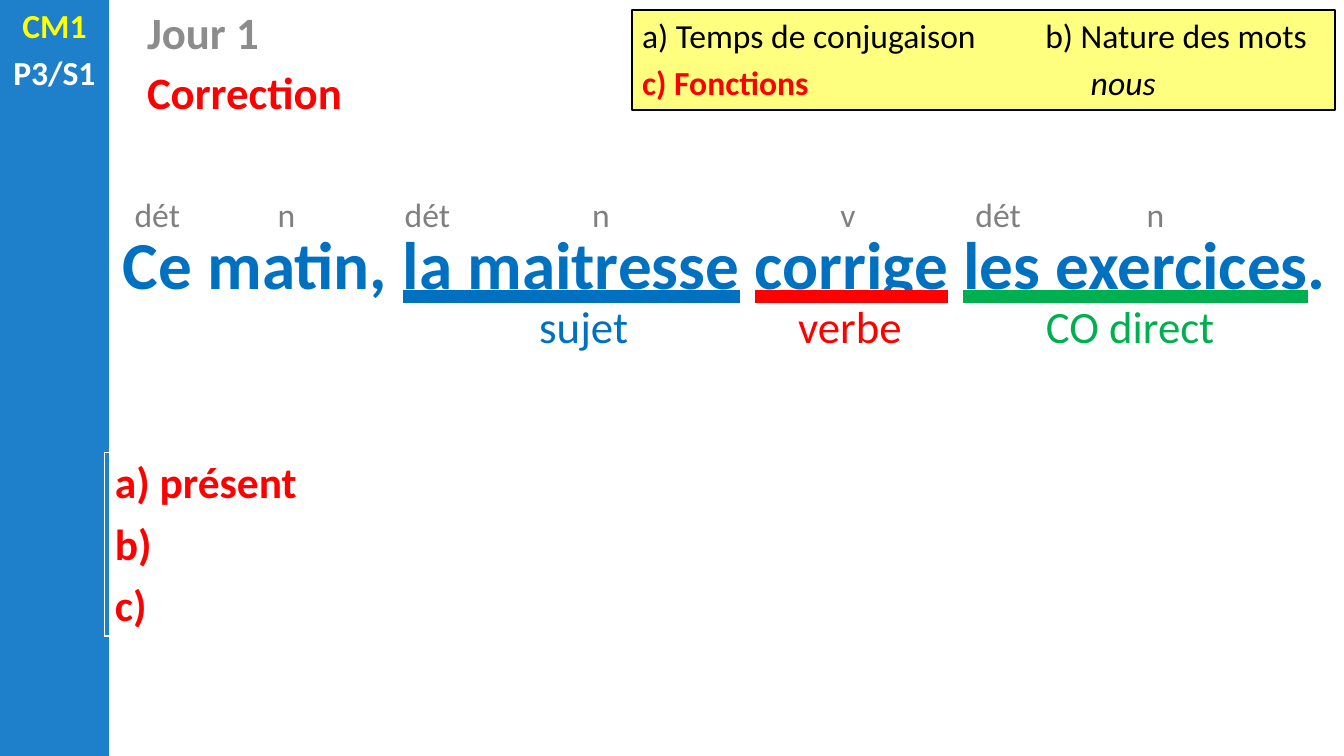
from lxml import etree
from pptx import Presentation
from pptx.dml.color import RGBColor
from pptx.enum.shapes import MSO_SHAPE
from pptx.enum.text import MSO_ANCHOR, MSO_UNDERLINE, PP_ALIGN
from pptx.oxml.ns import qn
from pptx.util import Inches, Pt

SLIDE_W, SLIDE_H = Inches(13.33), Inches(7.5)
FONT = "Calibri"
SIDEBAR = RGBColor(0x1E, 0x7F, 0xCB)
BLUE = RGBColor(0x00, 0x70, 0xC0)
RED = RGBColor(0xFF, 0x00, 0x00)
GREEN = RGBColor(0x00, 0xB0, 0x50)
YELLOW = RGBColor(0xFF, 0xFF, 0x00)
WHITE = RGBColor(0xFF, 0xFF, 0xFF)
BLACK = RGBColor(0x00, 0x00, 0x00)
DAY_GREY = RGBColor(0x8C, 0x8C, 0x8C)
TAG_GREY = RGBColor(0x80, 0x80, 0x80)

SIDEBAR_W = 8.1
BODY_X, BODY_W = 7.8, 92.2
TITLE_X, TITLE_H = 10.2, 8.53
TAG_Y, TAG_W, TAG_H = 24.93, 6.75, 6.67
TAGS = [("dét", 8.33), ("n", 17.93), ("dét", 28.43), ("n", 41.34),
        ("v", 59.71), ("dét", 70.89), ("n", 82.6)]
FUNCTION_Y = 38.8
FUNCTIONS = [("sujet", 38.78, 9.3, BLUE), ("verbe", 58.59, 9.3, RED),
             ("CO direct", 75.92, 16.35, GREEN)]
SENTENCE = [("Ce matin, ", None), ("la maitresse", BLUE), (" ", None),
            ("corrige", RED), (" ", None), ("les exercices", GREEN), (".", None)]


def across(share):
    return round(SLIDE_W * share / 100)


def down(share):
    return round(SLIDE_H * share / 100)


def area(x, y, w, h):
    return across(x), down(y), across(w), down(h)


def style(r, size, color, bold=False, italic=False):
    font = r.font
    font.size, font.bold, font.italic = Pt(size), bold, italic
    font.color.rgb = color
    font.name = FONT


def underline(r, color):
    r.font.underline = MSO_UNDERLINE.HEAVY_LINE
    u_fill = etree.Element(qn("a:uFill"))
    solid = etree.SubElement(u_fill, qn("a:solidFill"))
    etree.SubElement(solid, qn("a:srgbClr"), val=str(color))
    r.font.fill
    r._r.rPr.find(qn("a:solidFill")).addnext(u_fill)


def space_before(p):
    spacing = etree.SubElement(p._p.get_or_add_pPr(), qn("a:spcBef"))
    etree.SubElement(spacing, qn("a:spcPct"), val="20000")


def add_tab(p, share):
    tabs = etree.SubElement(p._p.get_or_add_pPr(), qn("a:tabLst"))
    etree.SubElement(tabs, qn("a:tab"), pos=str(across(share)), algn="l")


def add_text(s, box, text, size, colors, bold=False, align=PP_ALIGN.CENTER):
    tf = s.shapes.add_textbox(*area(*box)).text_frame
    tf.word_wrap = True
    tf.text = text
    for p, color in zip(tf.paragraphs, colors):
        p.alignment = align
        space_before(p)
        for r in p.runs:
            style(r, size, color, bold)
    return tf


def add_rect(s, box, color):
    sp = s.shapes.add_shape(MSO_SHAPE.RECTANGLE, *area(*box))
    sp.shadow.inherit = False
    sp.fill.solid()
    sp.fill.fore_color.rgb = color
    sp.line.fill.background()
    return sp


def add_sentence(s):
    tf = add_text(s, (BODY_X, 28.8, BODY_W, 12.13), "", 48, [BLUE])
    p = tf.paragraphs[0]
    for words, line_color in SENTENCE:
        r = p.add_run()
        r.text = words
        style(r, 48, BLUE, bold=True)
        if line_color is not None:
            underline(r, line_color)


def add_instructions(s):
    sp = add_rect(s, (47.04, 1.33, 52.29, 13.2), YELLOW)
    color = sp.fill._xPr.find(qn("a:solidFill"))[0]
    etree.SubElement(color, qn("a:alpha"), val="50000")
    sp.line.color.rgb = BLACK
    sp.line.width = Pt(1.5)
    tf = sp.text_frame
    tf.word_wrap = True
    tf.vertical_anchor = MSO_ANCHOR.TOP
    tf.text = "a) Temps de conjugaison\tb) Nature des mots\nc) Fonctions\t"
    tasks, functions = tf.paragraphs
    for p, tab in ((tasks, 30), (functions, 33.38)):
        p.alignment = PP_ALIGN.LEFT
        space_before(p)
        add_tab(p, tab)
    style(tasks.runs[0], 24, BLACK)
    style(functions.runs[0], 24, RED, bold=True)
    r = functions.add_run()
    r.text = "nous"
    style(r, 24, BLACK, italic=True)


def add_answers(s):
    table = s.shapes.add_table(1, 1, *area(BODY_X, 59.87, BODY_W, 24.27)).table
    table.first_row = table.horz_banding = False
    cell = table.cell(0, 0)
    cell.fill.background()
    cell.text_frame.text = "a) présent\nb)\nc)"
    for p in cell.text_frame.paragraphs:
        p.space_after = Pt(6)
        style(p.runs[0], 31, RED, bold=True)


def main():
    prs = Presentation()
    prs.slide_width, prs.slide_height = SLIDE_W, SLIDE_H
    s = prs.slides.add_slide(prs.slide_layouts[6])

    add_rect(s, (0, 0, SIDEBAR_W, 100), SIDEBAR)
    add_text(s, (0, 0, SIDEBAR_W, 13.2), "CM1\nP3/S1", 24, [YELLOW, WHITE], True)
    add_text(s, (TITLE_X, 0, 59.34, TITLE_H), "Jour 1", 32, [DAY_GREY], True,
             PP_ALIGN.LEFT)
    add_sentence(s)
    add_text(s, (TITLE_X, 7.87, 36.23, TITLE_H), "Correction", 32, [RED], True,
             PP_ALIGN.LEFT)
    add_instructions(s)
    add_answers(s)
    for tag, x in TAGS:
        add_text(s, (x, TAG_Y, TAG_W, TAG_H), tag, 24, [TAG_GREY])
    for name, x, w, color in FUNCTIONS:
        add_text(s, (x, FUNCTION_Y, w, TITLE_H), name, 32, [color])

    prs.save("out.pptx")


if __name__ == "__main__":
    main()
